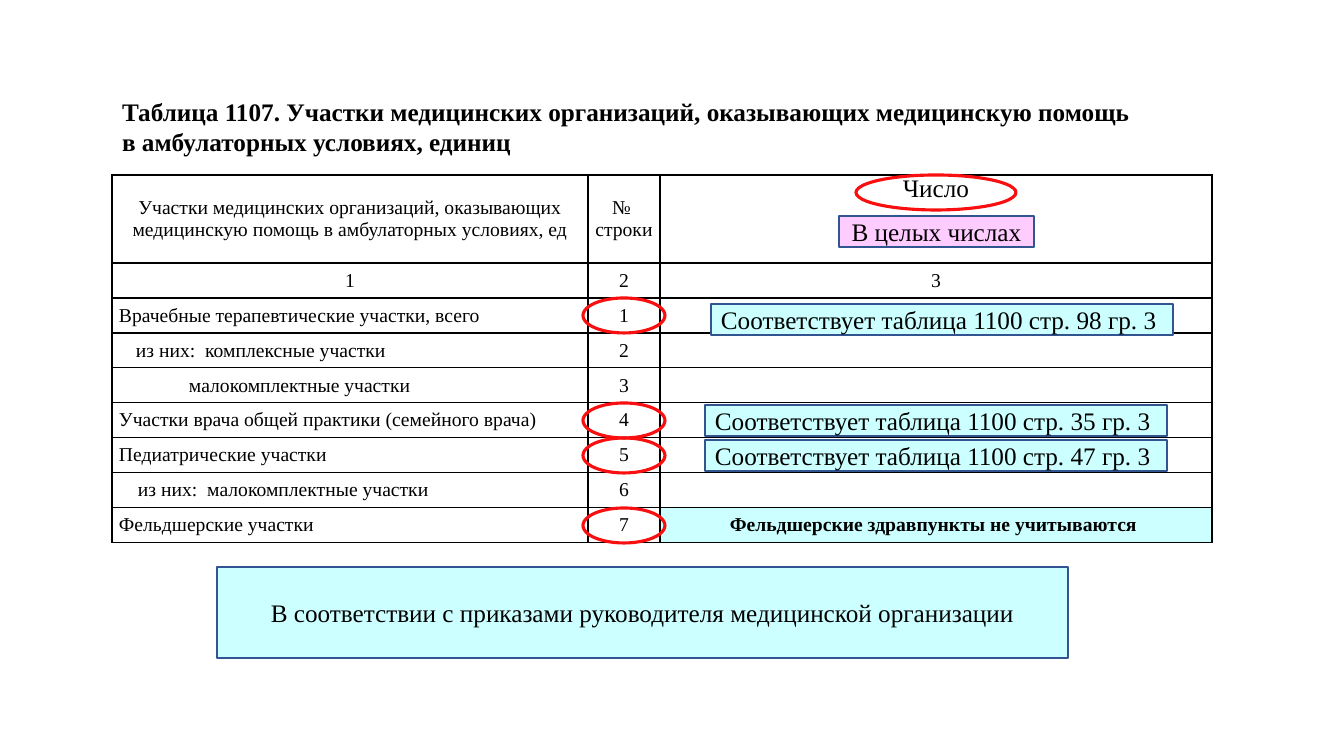
import pptx
import pptx.util
import pptx.dml.color
import pptx.enum.shapes
import pptx.enum.text
import pptx.oxml
import pptx.oxml.ns

# Content
HEADING = [
    "Таблица 1107. Участки медицинских организаций, оказывающих медицинскую помощь",
    "в амбулаторных условиях, единиц",
]
HEADER = [
    ["Участки медицинских организаций, оказывающих медицинскую помощь в амбулаторных условиях, ед"],
    ["№ ", "строки"],
    ["Число"],
]
# District type, left margin and first-line indent in px
DISTRICTS = [
    ("Врачебные терапевтические участки, всего", 0, 0),
    ("из них:  комплексные участки", 17, 0),
    ("малокомплектные участки", 70, 0),
    ("Участки врача общей практики (семейного врача)", 0, 0),
    ("Педиатрические участки", 0, 0),
    ("из них:  малокомплектные участки", 0, 19),
    ("Фельдшерские участки", 0, 0),
]
FELDSHER_NOTE = "Фельдшерские здравпункты не учитываются "
# Line number, left, offset from the top of its row, text
CHECKS = [
    (1, 711, 6, "Соответствует таблица 1100 стр. 98 гр. 3"),
    (4, 705, 2, "Соответствует таблица 1100 стр. 35 гр. 3"),
    (5, 705, 2, "Соответствует таблица 1100 стр. 47 гр. 3"),
]
WHOLE_NUMBERS = "В целых числах"
ORDERS = "В соответствии с приказами руководителя медицинской организации"
CIRCLED_LINES = [7, 5, 4, 1]

# Theme and geometry
THEME = {
    "font": "Times New Roman", "text": "000000", "cyan": "CCFFFF", "pink": "FFCCFF",
    "frame": "325491", "mark": "F90F0F", "large": 18, "small": 14,
}
PX = 914400 / 100.8
SLIDE_W, SLIDE_H = 1344, 756
TABLE_X, TABLE_Y = 112, 175
COLUMNS = [476, 72, 552]
HEADER_H, ROW_H = 88, 35
RING_W, NOTE_H = 82, 31

ALIGN = pptx.enum.text.PP_ALIGN
ANCHOR = pptx.enum.text.MSO_ANCHOR
SHAPE = pptx.enum.shapes.MSO_SHAPE


def px(length):
    return pptx.util.Emu(round(length * PX))


def color(name):
    return pptx.dml.color.RGBColor.from_string(THEME[name])


def row_top(line):
    """Top of a numbered line; line 0 holds the column numbers."""
    return TABLE_Y + HEADER_H + line * ROW_H


def column_middle(index):
    return TABLE_X + sum(COLUMNS[:index]) + COLUMNS[index] / 2


def write(frame, lines, size, align, bold=False):
    for index, line in enumerate(lines):
        paragraph = frame.paragraphs[0] if index == 0 else frame.add_paragraph()
        paragraph.alignment = align
        run = paragraph.add_run()
        run.text = line
        formats = {"name": THEME["font"], "size": pptx.util.Pt(THEME[size]), "bold": bold}
        for key, value in formats.items():
            setattr(run.font, key, value)
        run.font.color.rgb = color("text")


def add_figure(slide, kind, box, fill, line, width):
    figure = slide.shapes.add_shape(kind, *map(px, box))
    figure.shadow.inherit = False
    if fill:
        figure.fill.solid()
        figure.fill.fore_color.rgb = color(fill)
    else:
        figure.fill.background()
    figure.line.color.rgb = color(line)
    figure.line.width = pptx.util.Pt(width)
    return figure


def add_note(slide, box, text, fill="cyan", align=ALIGN.CENTER):
    note = add_figure(slide, SHAPE.RECTANGLE, box, fill, "frame", 1)
    note.text_frame.vertical_anchor = ANCHOR.MIDDLE
    write(note.text_frame, [text], "large", align)


def add_ring(slide, middle, top, width):
    box = (middle - width / 2, top, width, ROW_H)
    add_figure(slide, SHAPE.OVAL, box, None, "mark", 2.25)


def format_cell(cell, fill=None):
    formats = {"margin_left": px(7), "margin_right": px(7), "margin_top": 0,
               "margin_bottom": 0, "vertical_anchor": ANCHOR.MIDDLE}
    for key, value in formats.items():
        setattr(cell, key, value)
    properties = cell._tc.get_or_add_tcPr()
    for side in ("lnL", "lnR", "lnT", "lnB"):
        properties.append(pptx.oxml.parse_xml(
            f'<a:{side} {pptx.oxml.ns.nsdecls("a")} w="12700"><a:solidFill>'
            f'<a:srgbClr val="{THEME["text"]}"/></a:solidFill></a:{side}>'))
    if fill:
        cell.fill.solid()
        cell.fill.fore_color.rgb = color(fill)
    else:
        cell.fill.background()


def add_heading(slide):
    title = slide.shapes.title
    place = {"left": 112, "top": 91, "width": 1135, "height": 71}
    for key, value in place.items():
        setattr(title, key, px(value))
    formats = {"word_wrap": True, "vertical_anchor": ANCHOR.TOP,
               "auto_size": pptx.enum.text.MSO_AUTO_SIZE.NONE}
    for key, value in formats.items():
        setattr(title.text_frame, key, value)
    write(title.text_frame, HEADING, "large", ALIGN.LEFT, bold=True)


def add_districts(slide):
    rows = len(DISTRICTS) + 2
    height = HEADER_H + (rows - 1) * ROW_H
    box = (TABLE_X, TABLE_Y, sum(COLUMNS), height)
    table = slide.shapes.add_table(rows, len(COLUMNS), *map(px, box)).table
    table.first_row = table.horz_banding = False
    for column, width in zip(table.columns, COLUMNS):
        column.width = px(width)
    for index, row in enumerate(table.rows):
        row.height = px(ROW_H if index else HEADER_H)
        for cell in row.cells:
            is_feldsher_note = index == rows - 1 and cell is not None and cell._tc.col_idx == 2
            format_cell(cell, "cyan" if is_feldsher_note else None)

    # Header and column numbers
    for index, lines in enumerate(HEADER):
        size = "large" if index == 2 else "small"
        write(table.cell(0, index).text_frame, lines, size, ALIGN.CENTER)
        write(table.cell(1, index).text_frame, [str(index + 1)], "small", ALIGN.CENTER)
    table.cell(0, 2).vertical_anchor = ANCHOR.TOP

    # Numbered lines
    for line, (name, margin, indent) in enumerate(DISTRICTS, 1):
        frame = table.cell(line + 1, 0).text_frame
        write(frame, [name], "small", ALIGN.LEFT)
        paragraph = frame.paragraphs[0]._p.get_or_add_pPr()
        paragraph.set("marL", str(px(margin)))
        paragraph.set("indent", str(px(indent)))
        write(table.cell(line + 1, 1).text_frame, [str(line)], "small", ALIGN.CENTER)
    write(table.cell(rows - 1, 2).text_frame, [FELDSHER_NOTE], "small", ALIGN.CENTER, bold=True)


def main():
    deck = pptx.Presentation()
    deck.slide_width, deck.slide_height = px(SLIDE_W), px(SLIDE_H)
    slide = deck.slides.add_slide(deck.slide_layouts[5])

    add_heading(slide)
    add_districts(slide)

    # Notes over the table
    for line, left, offset, text in CHECKS:
        add_note(slide, (left, row_top(line) + offset, 462, NOTE_H), text, align=ALIGN.LEFT)
    add_note(slide, (839, 216, 195, NOTE_H), WHOLE_NUMBERS, "pink")

    # Rings around line numbers and the count heading
    for line in CIRCLED_LINES:
        add_ring(slide, column_middle(1), row_top(line), RING_W)
    add_ring(slide, column_middle(2), TABLE_Y, 160)

    # Closing note
    add_note(slide, (217, 567, 851, 91), ORDERS)
    deck.save("out.pptx")


if __name__ == "__main__":
    main()
